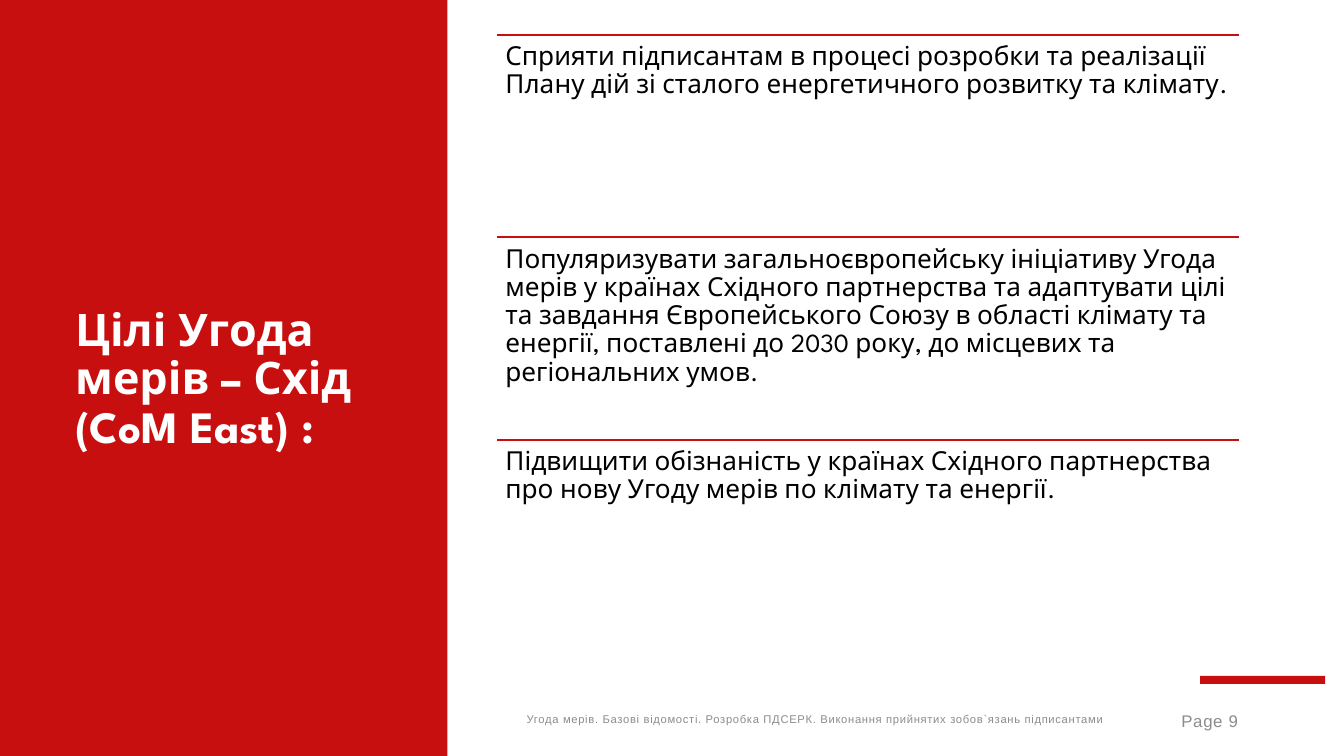
"""Build the slide on the goals of the Covenant of Mayors East."""
import pptx
import pptx.dml.color
import pptx.enum.shapes
import pptx.enum.text
import pptx.oxml.ns
import pptx.util
from lxml import etree

TITLE = "Цілі Угода мерів – Схід (CoM East) :"
GOALS = [
    "Сприяти підписантам в процесі розробки та реалізації Плану дій зі сталого "
    "енергетичного розвитку та клімату.",
    "Популяризувати загальноєвропейську ініціативу Угода мерів у країнах Східного "
    "партнерства та адаптувати цілі та завдання Європейського Союзу в області клімату "
    "та енергії, поставлені до 2030 року, до місцевих та регіональних умов.",
    "Підвищити обізнаність у країнах Східного партнерства про нову Угоду мерів по "
    "клімату та енергії.",
]
FOOTER = ("Угода мерів. Базові відомості. Розробка ПДСЕРК. "
          "Виконання прийнятих зобов`язань підписантами")
PAGE = "Page 9"

THEME = {
    "red": "C80F0F", "white": "FFFFFF", "black": "000000", "grey": "8C8C8C",
    "main": "League Spartan", "small": "Arial",
    "title": 24, "goal": 14, "page": 9, "footer": 6, "tracking": 37,
}
WIDTH = 10
HEIGHT = WIDTH * 9 / 16
PANEL = (-0.01, 0, 3.34, HEIGHT)
ACCENT = (8.93, 5.03, 0.93, 0.06)
TITLE_BOX = (0.46, 0.53, 2.61, 4.6)
FOOTER_BOX = (3.82, 5.21, 4.69, 0.3)
PAGE_BOX = (8.64, 5.21, 0.67, 0.3)
GOALS_LEFT, GOALS_TOP, GOALS_WIDTH, GOALS_HEIGHT = 3.7, 0.26, 5.52, 4.52
INSET = 0.06

ALIGN = pptx.enum.text.PP_ALIGN
ANCHOR = pptx.enum.text.MSO_ANCHOR


def inches(*values):
    return [pptx.util.Inches(v) for v in values]


def rgb(name):
    return pptx.dml.color.RGBColor.from_string(THEME[name])


def add_bar(slide, box):
    sp = slide.shapes.add_shape(pptx.enum.shapes.MSO_SHAPE.RECTANGLE, *inches(*box))
    sp.shadow.inherit = False
    sp.fill.solid()
    sp.fill.fore_color.rgb = rgb("red")
    sp.line.fill.background()


def add_rule(slide, left, top, width):
    line = slide.shapes.add_connector(
        pptx.enum.shapes.MSO_CONNECTOR.STRAIGHT, *inches(left, top, left + width, top))
    line.line.color.rgb = rgb("red")
    line.line.width = pptx.util.Pt(1)
    etree.SubElement(line._element.spPr, pptx.oxml.ns.qn("a:effectLst"))


def write(sp, text, size, color, font="main", bold=False, anchor=ANCHOR.MIDDLE,
          align=ALIGN.LEFT, line_spacing=0.9, after=0, tracking=0):
    tf = sp.text_frame
    tf.text = text
    tf.word_wrap = True
    tf.auto_size = pptx.enum.text.MSO_AUTO_SIZE.NONE
    tf.vertical_anchor = anchor
    p = tf.paragraphs[0]
    p.alignment = align
    p.line_spacing = line_spacing
    p.space_after = pptx.util.Pt(after)
    r = p.runs[0]
    r.font.name = THEME[font]
    r.font.size = pptx.util.Pt(THEME[size])
    r.font.bold = bold
    r.font.color.rgb = rgb(color)
    if tracking:
        r.font._element.set("spc", str(tracking))
    return tf


def add_title(slide):
    title = slide.shapes.title
    title.left, title.top, title.width, title.height = inches(*TITLE_BOX)
    write(title, TITLE, "title", "white", bold=True)
    slide.shapes._spTree.append(title._element)


def add_note_line(slide, box, text, size, **style):
    sp = slide.shapes.add_textbox(*inches(*box))
    write(sp, text, size, "grey", font="small", after=6,
          tracking=THEME["tracking"], **style)


def add_goals(slide):
    row = GOALS_HEIGHT / len(GOALS)
    for i, goal in enumerate(GOALS):
        top = GOALS_TOP + i * row
        add_rule(slide, GOALS_LEFT, top, GOALS_WIDTH)
        sp = slide.shapes.add_textbox(*inches(GOALS_LEFT, top, GOALS_WIDTH, row))
        tf = write(sp, goal, "goal", "black", anchor=ANCHOR.TOP)
        tf.margin_left = tf.margin_right = pptx.util.Inches(INSET)
        tf.margin_top = tf.margin_bottom = pptx.util.Inches(INSET)


def main():
    prs = pptx.Presentation()
    prs.slide_width, prs.slide_height = inches(WIDTH, HEIGHT)
    slide = prs.slides.add_slide(prs.slide_layouts.get_by_name("Title Only"))
    for box in (ACCENT, PANEL):
        add_bar(slide, box)
    add_note_line(slide, FOOTER_BOX, FOOTER, "footer")
    add_note_line(slide, PAGE_BOX, PAGE, "page", align=ALIGN.RIGHT, line_spacing=1.0)
    add_title(slide)
    add_goals(slide)
    prs.save("out.pptx")


if __name__ == "__main__":
    main()
